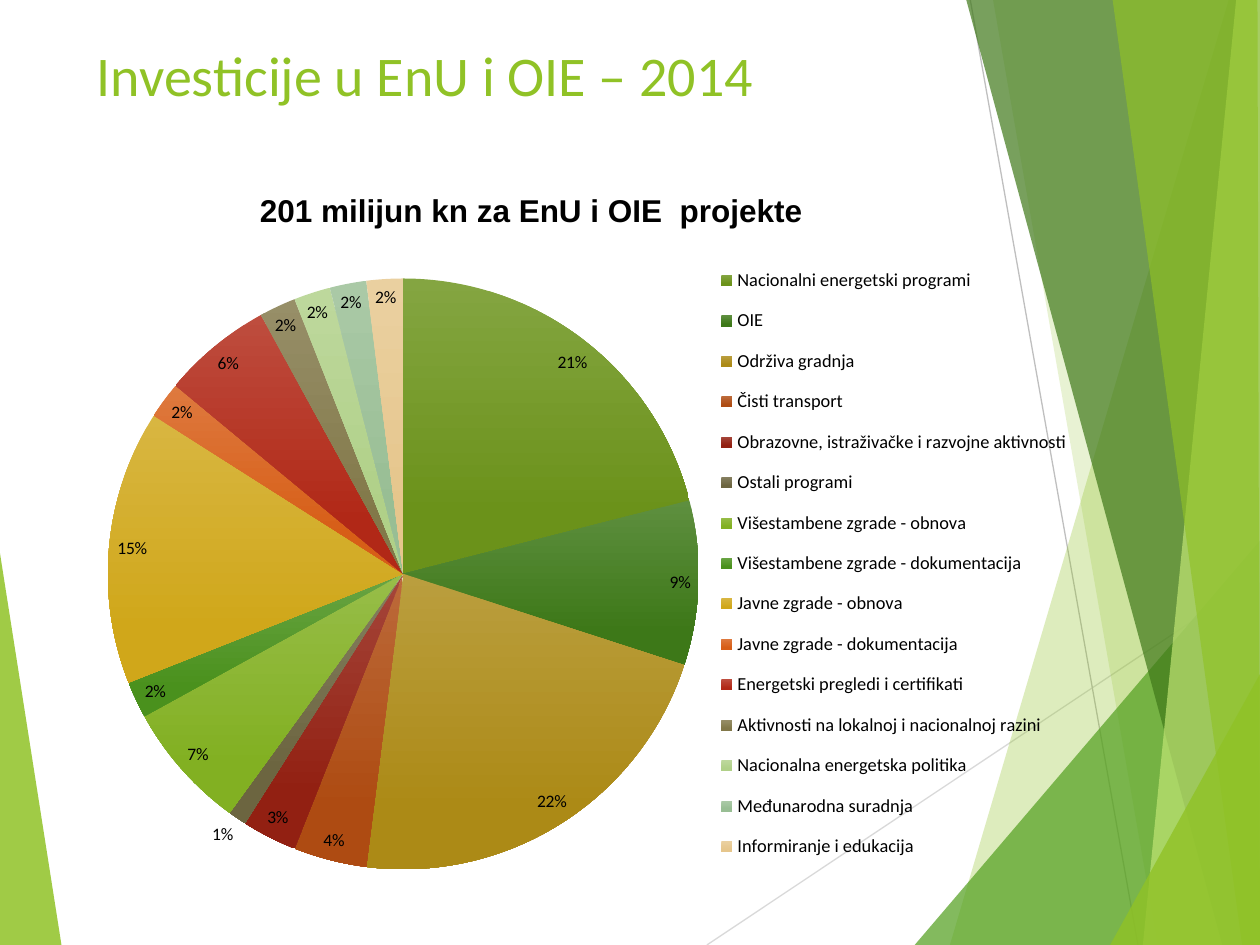
from lxml.etree import SubElement
from pptx import Presentation
from pptx.chart.data import CategoryChartData
from pptx.dml.color import RGBColor
from pptx.enum.chart import XL_CHART_TYPE, XL_LABEL_POSITION, XL_LEGEND_POSITION
from pptx.enum.shapes import MSO_CONNECTOR
from pptx.enum.text import MSO_ANCHOR, PP_ALIGN
from pptx.oxml import parse_xml
from pptx.oxml.ns import nsdecls, qn
from pptx.util import Cm, Pt

WIDE, HIGH = 25.4, 19.05

SHADES = [
    ("90C226", 85, [(0, 11.15), (1.24, HIGH), (0, HIGH)]),
    ("90C226", 30, [(24.77, 0), (19.15, HIGH), (WIDE, HIGH), (WIDE, 0)]),
    ("90C226", 20, [(20.02, 0), (23.34, HIGH), (WIDE, HIGH), (WIDE, 0)]),
    ("54A021", 72, [(18.44, HIGH), (WIDE, 10.9), (WIDE, HIGH)]),
    ("3F7819", 70, [(19.48, 0), (24.64, HIGH), (WIDE, HIGH), (WIDE, 0)]),
    ("C0E474", 70, [(24.92, 0), (23.04, HIGH), (WIDE, HIGH), (WIDE, 0)]),
    ("90C226", 65, [(22.43, 0), (25.04, HIGH), (WIDE, HIGH), (25.35, 0)]),
    ("90C226", 80, [(22.38, HIGH), (WIDE, 13.59), (WIDE, HIGH)]),
]
LINES = [("D9D9D9", (14.25, HIGH), (WIDE, 11.61)),
         ("BFBFBF", (19.56, 0), (22.94, HIGH))]
PARTS = [
    ("Nacionalni energetski programi", 21, "6B921A"),
    ("OIE", 9, "3D7818"),
    ("Održiva gradnja", 22, "AC8A16"),
    ("Čisti transport", 4, "AE4B12"),
    ("Obrazovne, istraživačke i razvojne aktivnosti", 3, "922012"),
    ("Ostali programi", 1, "6C6540"),
    ("Višestambene zgrade - obnova", 7, "82B022"),
    ("Višestambene zgrade - dokumentacija", 2, "4A911D"),
    ("Javne zgrade - obnova", 15, "D0A71A"),
    ("Javne zgrade - dokumentacija", 2, "D75E17"),
    ("Energetski pregledi i certifikati", 6, "B12817"),
    ("Aktivnosti na lokalnoj i nacionalnoj razini", 2, "827849"),
    ("Nacionalna energetska politika", 2, "B0D088"),
    ("Međunarodna suradnja", 2, "98BE94"),
    ("Informiranje i edukacija", 2, "E6C68C"),
]


def paint(code):
    return RGBColor.from_string(code)


def tint(code, part=0.17):
    return "".join(f"{round(v + (255 - v) * part):02X}" for v in bytes.fromhex(code))


def apply(item, form):
    for key, value in form.items():
        setattr(item, key, value)


def place(x, y, wide, high):
    return parse_xml(
        f'<c:layout {nsdecls("c")}><c:manualLayout>'
        '<c:xMode val="edge"/><c:yMode val="edge"/>'
        f'<c:x val="{x}"/><c:y val="{y}"/><c:w val="{wide}"/><c:h val="{high}"/>'
        '</c:manualLayout></c:layout>')


class Deck:
    """Holds the text styles and the current slide, and draws each kind of element."""

    styles = {
        "title": {"name": "Calibri", "size": Pt(32)},
        "head": {"name": "Arial", "size": Pt(18), "bold": True},
        "label": {"name": "Calibri", "size": Pt(10)},
        "key": {"name": "Calibri", "size": Pt(10.5)},
    }

    def __init__(self):
        self.show = Presentation()
        apply(self.show, {"slide_width": Cm(WIDE), "slide_height": Cm(HIGH)})
        self.slide = self.show.slides.add_slide(self.show.slide_layouts[6])
        self.shapes = self.slide.shapes

    def style(self, font, kind, code="000000"):
        apply(font, self.styles[kind])
        font.color.rgb = paint(code)

    def shade(self, code, alpha, points):
        dots = [(x * 100, y * 100) for x, y in points]
        pen = self.shapes.build_freeform(*dots[0], scale=Cm(0.01))
        pen.add_line_segments(dots[1:], close=True)
        shape = pen.convert_to_shape()
        shape.shadow.inherit = False
        shape.fill.solid()
        shape.fill.fore_color.rgb = paint(code)
        shape.line.fill.background()
        tone = next(shape._element.spPr.iter(qn("a:srgbClr")))
        SubElement(tone, qn("a:alpha"), val=str(alpha * 1000))

    def line(self, code, start, end):
        line = self.shapes.add_connector(
            MSO_CONNECTOR.STRAIGHT, *(Cm(v) for v in start + end))
        line.line.width = Pt(0.75)
        line.line.color.rgb = paint(code)
        SubElement(line._element.spPr, qn("a:effectLst"))

    def text(self, words, box, kind, code, align):
        frame = self.shapes.add_textbox(*(Cm(v) for v in box)).text_frame
        apply(frame, {"word_wrap": True, "vertical_anchor": MSO_ANCHOR.TOP})
        para = frame.paragraphs[0]
        apply(para, {"text": words, "alignment": align})
        self.style(para.runs[0].font, kind, code)

    def pie(self, parts, box):
        data = CategoryChartData()
        data.categories = [name for name, _, _ in parts]
        data.add_series("Series 1", [value for _, value, _ in parts])
        chart = self.shapes.add_chart(
            XL_CHART_TYPE.PIE, *(Cm(v) for v in box), data).chart
        apply(chart, {"has_title": False, "has_legend": True})
        self.style(chart.font, "label")
        apply(chart.legend, {"position": XL_LEGEND_POSITION.RIGHT,
                             "include_in_layout": False})
        self.style(chart.legend.font, "key")
        key = chart.legend._element
        key.find(qn("c:legendPos")).addnext(place(0.63, 0.04, 0.36, 0.92))
        plot = chart.plots[0]
        apply(plot, {"vary_by_categories": True, "has_data_labels": True})
        area = plot._element.getparent()
        for old in area.findall(qn("c:layout")):
            area.remove(old)
        spot = place(0.03, 0.08, 0.59, 0.87)
        target = SubElement(spot[0], qn("c:layoutTarget"), val="inner")
        spot[0].insert(0, target)
        area.insert(0, spot)
        apply(plot.data_labels, {
            "show_percentage": True, "show_value": False,
            "number_format": "0%", "number_format_is_linked": False,
            "position": XL_LABEL_POSITION.BEST_FIT})
        self.style(plot.data_labels.font, "label")
        for at, (_, _, code) in enumerate(parts):
            form = plot.series[0].points[at].format
            form.line.fill.background()
            form.fill.gradient()
            form.fill.gradient_angle = 270
            for stop, tone, where in zip(form.fill.gradient_stops,
                                         (tint(code), code), (0, 0.8)):
                stop.color.rgb = paint(tone)
                stop.position = where

    def save(self):
        self.show.save("out.pptx")


def main():
    deck = Deck()
    deck.shade(*SHADES[0])
    for line in LINES:
        deck.line(*line)
    for shade in SHADES[1:]:
        deck.shade(*shade)
    deck.text("Investicije u EnU i OIE – 2014", (1.7, 0.69, 18.31, 2.64),
              "title", "90C226", PP_ALIGN.LEFT)
    deck.text("201 milijun kn za EnU i OIE  projekte", (2.11, 3.73, 17.2, 1.02),
              "head", "000000", PP_ALIGN.CENTER)
    deck.pie(PARTS, (1.5, 4.52, 20.4, 13.69))
    deck.save()


if __name__ == "__main__":
    main()
